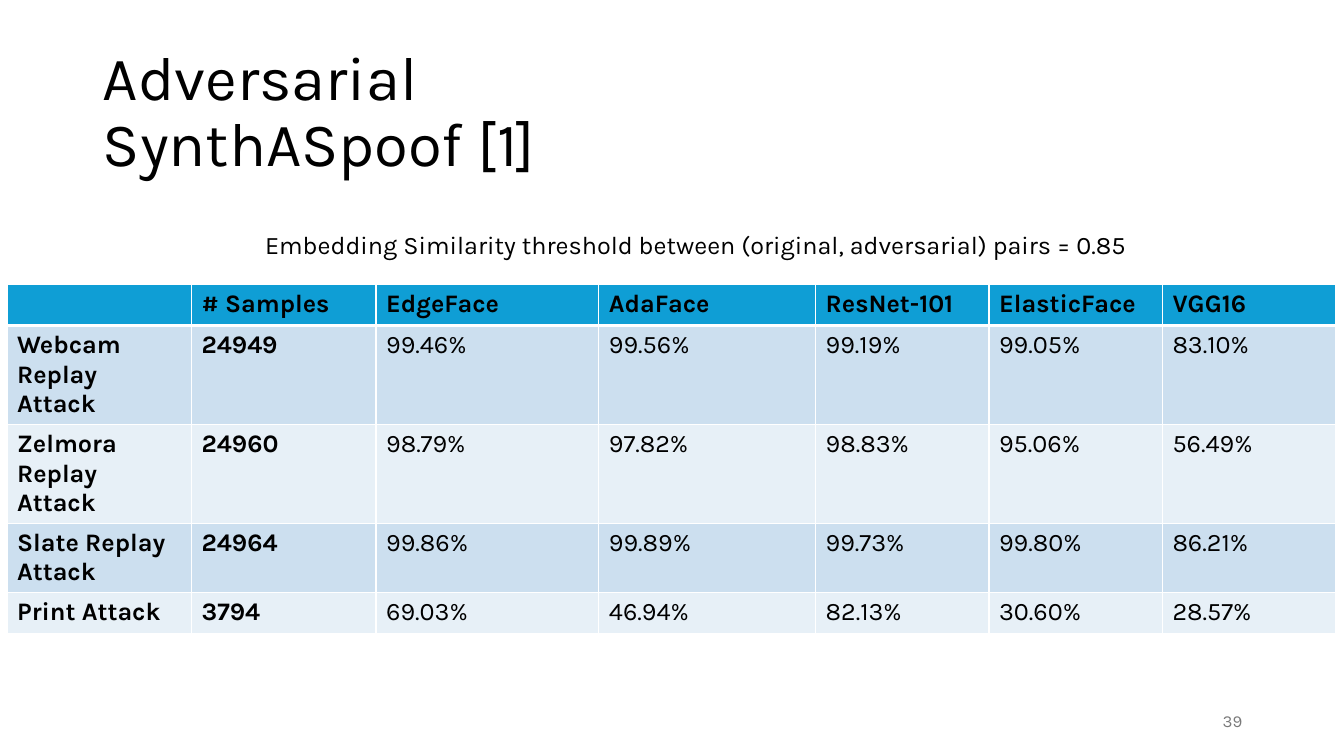
from lxml import etree
from pptx import Presentation
from pptx.dml.color import RGBColor
from pptx.enum.text import MSO_ANCHOR, MSO_AUTO_SIZE, PP_ALIGN
from pptx.oxml.ns import qn
from pptx.util import Inches, Pt

LEFT, RIGHT = PP_ALIGN.LEFT, PP_ALIGN.RIGHT
TOP, MIDDLE = MSO_ANCHOR.TOP, MSO_ANCHOR.MIDDLE
NO_FIT = MSO_AUTO_SIZE.NONE

COLORS = {"text": "000000", "number": "797979", "header": "0F9ED5",
          "odd": "CCDFEF", "even": "E7F0F7", "border": "FFFFFF"}
FONT = "Karla"
TITLE = ["Adversarial", "SynthASpoof [1]"]
CAPTION = "Embedding Similarity threshold between (original, adversarial) pairs = 0.85"
PAGE = "39"
ROWS = [
    ["", "# Samples", "EdgeFace", "AdaFace", "ResNet-101", "ElasticFace", "VGG16"],
    ["Webcam Replay Attack", "24949", "99.46%", "99.56%", "99.19%", "99.05%", "83.10%"],
    ["Zelmora Replay Attack", "24960", "98.79%", "97.82%", "98.83%", "95.06%", "56.49%"],
    ["Slate Replay Attack", "24964", "99.86%", "99.89%", "99.73%", "99.80%", "86.21%"],
    ["Print Attack", "3794", "69.03%", "46.94%", "82.13%", "30.60%", "28.57%"],
]
COL_WIDTHS = [1.83, 1.83, 2.21, 2.15, 1.72, 1.72, 1.72]
ROW_HEIGHT = 0.41
LABEL_COLS = 2


def style(font, size, color="text", bold=False):
    formats = {"name": FONT, "size": Pt(size), "bold": bold}
    for name, value in formats.items():
        setattr(font, name, value)
    font.color.rgb = RGBColor.from_string(COLORS[color])


def set_borders(cell, bottom):
    tcPr = cell._tc.get_or_add_tcPr()
    widths = {"a:lnL": 1, "a:lnR": 1, "a:lnT": 1, "a:lnB": bottom}
    for i, (tag, width) in enumerate(widths.items()):
        ln = etree.Element(qn(tag), w=str(Pt(width)))
        fill = etree.SubElement(ln, qn("a:solidFill"))
        etree.SubElement(fill, qn("a:srgbClr"), val=COLORS["border"])
        tcPr.insert(i, ln)


def add_text(s, box, text, size, color="text", align=LEFT, anchor=TOP):
    tf = s.shapes.add_textbox(*map(Inches, box)).text_frame
    tf.word_wrap = True
    tf.vertical_anchor = anchor
    p = tf.paragraphs[0]
    p.alignment = align
    r = p.add_run()
    r.text = text
    style(r.font, size, color)


def add_title(s):
    title = s.shapes.title
    box = {"left": 0.92, "top": 0.4, "width": 11.5, "height": 1.45}
    for name, value in box.items():
        setattr(title, name, Inches(value))
    tf = title.text_frame
    tf.auto_size = NO_FIT
    tf.vertical_anchor = MIDDLE
    p = tf.paragraphs[0]
    p.alignment = LEFT
    p.line_spacing = 0.9
    for i, line in enumerate(TITLE):
        if i:
            p.add_line_break()
        r = p.add_run()
        r.text = line
        style(r.font, 44)


def add_results(s):
    frame = s.shapes.add_table(len(ROWS), len(COL_WIDTHS), Inches(0.07), Inches(2.82),
                               Inches(sum(COL_WIDTHS)), Inches(ROW_HEIGHT * len(ROWS)))
    table = frame.table
    for col, width in zip(table.columns, COL_WIDTHS):
        col.width = Inches(width)
    for i, values in enumerate(ROWS):
        table.rows[i].height = Inches(ROW_HEIGHT)
        band = "header" if i == 0 else "odd" if i % 2 else "even"
        for j, value in enumerate(values):
            cell = table.cell(i, j)
            cell.text = value
            style(cell.text_frame.paragraphs[0].font, 18, bold=i == 0 or j < LABEL_COLS)
            if value:
                style(cell.text_frame.paragraphs[0].runs[0].font, 18,
                      bold=i == 0 or j < LABEL_COLS)
            cell.fill.solid()
            cell.fill.fore_color.rgb = RGBColor.from_string(COLORS[band])
            set_borders(cell, bottom=1 if i else 3)


def main():
    prs = Presentation()
    prs.slide_width, prs.slide_height = Inches(13.33), Inches(7.5)
    s = prs.slides.add_slide(prs.slide_layouts[5])
    add_title(s)
    add_results(s)
    add_text(s, (2.53, 2.23, 8.95, 0.4), CAPTION, 18)
    add_text(s, (9.42, 6.95, 3, 0.4), PAGE, 12, "number", RIGHT, MIDDLE)
    prs.save("out.pptx")


if __name__ == "__main__":
    main()
